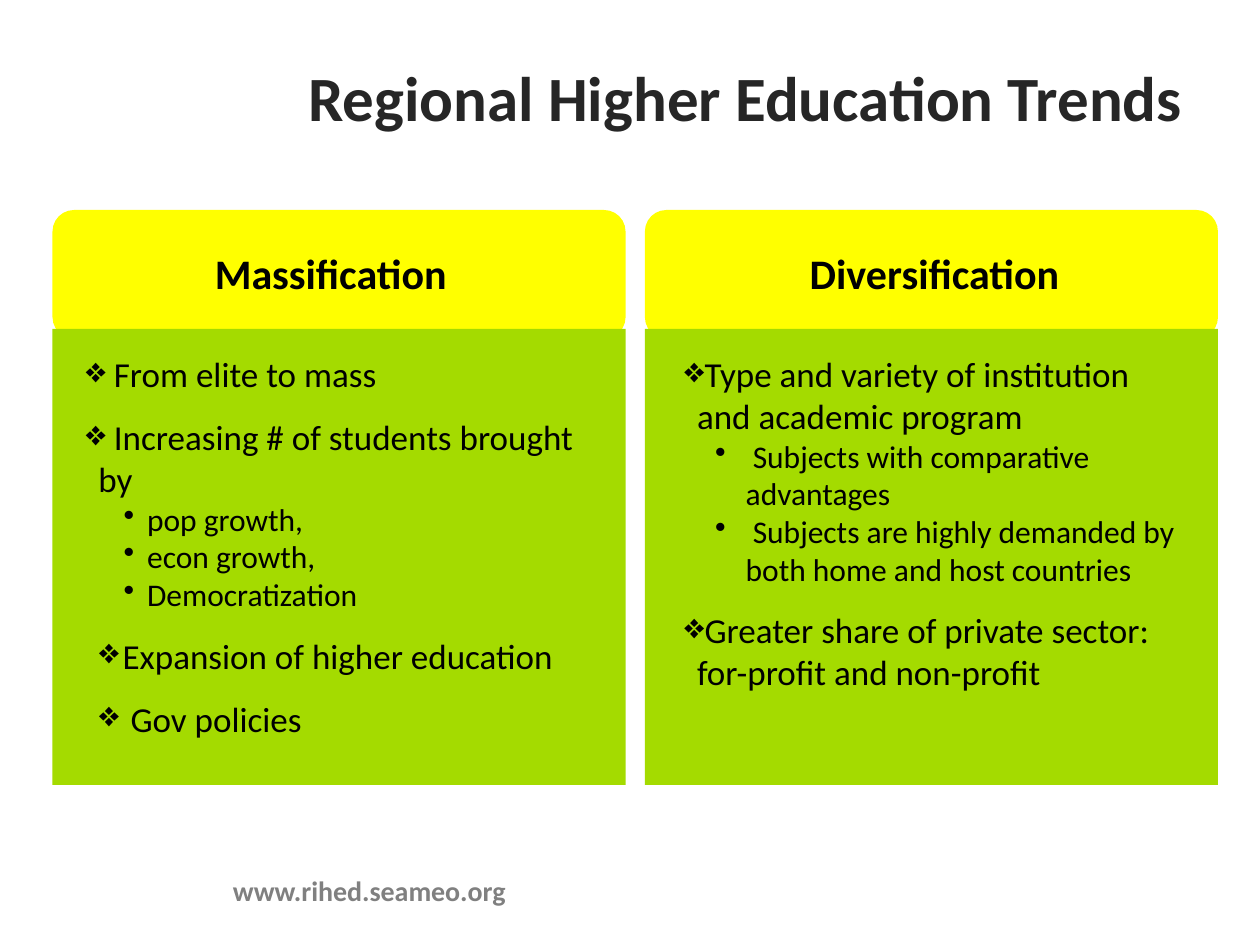
from dataclasses import dataclass
from typing import Optional

from lxml import etree
from pptx import Presentation
from pptx import util as u
from pptx.dml import color
from pptx.enum import shapes, text
from pptx.oxml import ns

COLORS = {
    "header": "FFFF00",
    "panel": "A4DB00",
    "body": "000000",
    "title": "262626",
    "footer": "808080",
}
FONT = "Calibri"
PANEL_LEFT, PANEL_WIDTH, PANEL_STEP = 30, 327.5, 338.5
HEADER_TOP, HEADER_HEIGHT = 120, 73.5
PANEL_TOP, PANEL_HEIGHT = 188, 260.5


@dataclass(frozen=True)
class Style:
    bullet: str
    size: float
    margin: float
    indent: float
    level: int


@dataclass(frozen=True)
class Item:
    wording: str
    style: Style
    after: float = 0


@dataclass(frozen=True)
class Trend:
    heading: str
    left: float
    width: float
    body_height: float
    items: tuple[Item, ...]


POINT = Style("❖", 20, 7.2, -7.2, 1)
INSET_POINT = Style("❖", 20, 21, -13.5, 2)
FACTOR = Style("•", 18, 35, -13.5, 2)
SUBJECT = Style("•", 18, 35, -17.5, 1)

TRENDS = (
    Trend("Massification", 42, 294, 230, (
        Item(" From elite to mass", POINT, 12),
        Item(" Increasing # of students brought by", POINT),
        Item("pop growth,", FACTOR),
        Item("econ growth,", FACTOR),
        Item("Democratization", FACTOR, 12),
        Item("Expansion of higher education", INSET_POINT, 12),
        Item(" Gov policies", INSET_POINT, 12),
    )),
    Trend("Diversification", 384, 300, 238, (
        Item("Type and variety of institution and academic program", POINT),
        Item(" Subjects with comparative advantages", SUBJECT),
        Item(" Subjects are highly demanded by both home and host countries", SUBJECT, 12),
        Item("Greater share of private sector: for-profit and non-profit", POINT, 12),
    )),
)


def rgb(role: str) -> color.RGBColor:
    """Return the colour for a role."""
    return color.RGBColor.from_string(COLORS[role])


def add_block(slide, kind, left: float, top: float, height: float, role: str) -> None:
    """Draw one filled block of panel width."""
    block = slide.shapes.add_shape(
        kind, u.Pt(left), u.Pt(top), u.Pt(PANEL_WIDTH), u.Pt(height))
    block.shadow.inherit = False
    block.fill.solid()
    block.fill.fore_color.rgb = rgb(role)
    block.line.fill.background()


def add_frame(slide, left: float, top: float, width: float, height: float):
    """Add a wrapping text box and return its text frame."""
    box = slide.shapes.add_textbox(u.Pt(left), u.Pt(top), u.Pt(width), u.Pt(height))
    box.text_frame.word_wrap = True
    return box.text_frame


def add_run(paragraph, wording: str, size: float, role: str, bold: bool = False) -> None:
    """Append a styled run to a paragraph."""
    run = paragraph.add_run()
    run.text = wording
    run.font.name = FONT
    run.font.size = u.Pt(size)
    run.font.bold = bold
    run.font.color.rgb = rgb(role)


def add_line(slide, wording: str, left: float, top: float, width: float, height: float,
             size: float, role: str, align: Optional[text.PP_ALIGN] = None) -> None:
    """Add a bold single-line label."""
    paragraph = add_frame(slide, left, top, width, height).paragraphs[0]
    paragraph.alignment = align
    add_run(paragraph, wording, size, role, True)


def fill_item(paragraph, item: Item) -> None:
    """Write one bulleted item into a paragraph."""
    style = item.style
    properties = paragraph._p.get_or_add_pPr()
    properties.set("marL", str(int(u.Pt(style.margin))))
    properties.set("indent", str(int(u.Pt(style.indent))))
    etree.SubElement(properties, ns.qn("a:buChar")).set("char", style.bullet)
    paragraph.level = style.level
    paragraph.space_after = u.Pt(item.after)
    add_run(paragraph, item.wording, style.size, "body")


def add_trend(slide, trend: Trend) -> None:
    """Add the heading and the items of one trend."""
    add_line(slide, trend.heading, trend.left, 138, trend.width, 36, 24, "body",
             text.PP_ALIGN.CENTER)
    frame = add_frame(slide, trend.left, 198, trend.width, trend.body_height)
    for index, item in enumerate(trend.items):
        fill_item(frame.add_paragraph() if index else frame.paragraphs[0], item)


def main() -> None:
    """Build the slide and save it."""
    deck = Presentation()
    deck.slide_width, deck.slide_height = u.Pt(720), u.Pt(540)
    slide = deck.slides.add_slide(deck.slide_layouts[6])
    add_line(slide, "www.rihed.seameo.org", 126, 495.5, 192, 26.5, 16, "footer")
    for column in range(len(TRENDS)):
        left = PANEL_LEFT + column * PANEL_STEP
        add_block(slide, shapes.MSO_SHAPE.ROUNDED_RECTANGLE, left, HEADER_TOP,
                  HEADER_HEIGHT, "header")
        add_block(slide, shapes.MSO_SHAPE.RECTANGLE, left, PANEL_TOP,
                  PANEL_HEIGHT, "panel")
    for trend in TRENDS:
        add_trend(slide, trend)
    add_line(slide, "Regional Higher Education Trends", 162, 30, 528, 66, 36, "title",
             text.PP_ALIGN.CENTER)
    deck.save("out.pptx")


if __name__ == "__main__":
    main()
